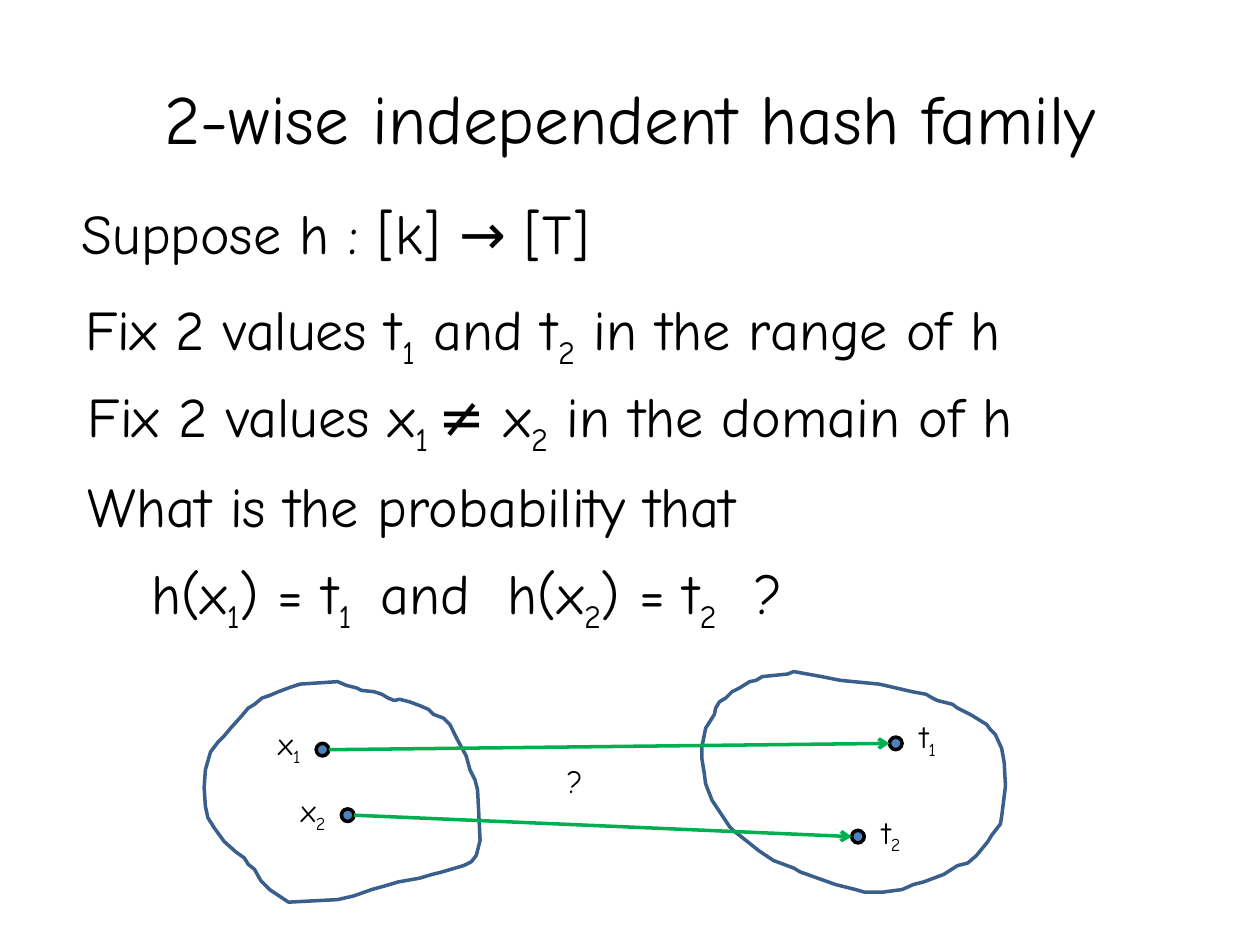
import pptx
import pptx.util
import pptx.dml.color
import pptx.enum.shapes
import pptx.enum.text
import pptx.oxml.ns
import lxml.etree

FONT = "Comic Neue"
BLACK, OUTLINE, DOT, ARROW = "000000", "3A5F8C", "4F81BD", "00B050"
DOT_SIZE = 0.1
LINE_HEIGHT, LABEL_HEIGHT = 0.64, 0.4

TITLE = "2-wise independent hash family"
# Text between bars is subscript: (text, left, top, width)
STATEMENTS = [
    ("Suppose h : [k] → [T]", 0.55, 1.53, 8.9),
    ("Fix 2 values t|1| and t|2| in the range of h", 0.58, 2.29, 8.9),
    ("Fix 2 values x|1 |≠ x|2| in the domain of h", 0.6, 2.98, 8.9),
    ("What is the probability that", 0.6, 3.69, 8.9),
    ("h(x|1|) = t|1 | and  h(x|2|) = t|2|  ?", 1.1, 4.38, 5.95),
]
# Outlines of the two sets, in hundredths of an inch
DOMAIN = [
    (313, 556), (308, 554), (303, 551), (297, 549), (287, 548), (283, 546), (275, 544),
    (268, 541), (238, 543), (229, 546), (221, 549), (214, 552), (208, 554), (202, 559),
    (197, 562), (192, 568), (183, 578), (178, 584), (173, 589), (167, 597), (163, 611),
    (162, 625), (163, 640), (165, 649), (170, 657), (178, 668), (187, 676), (194, 681),
    (197, 686), (202, 690), (207, 699), (214, 706), (229, 716), (268, 714), (281, 711),
    (295, 706), (306, 703), (316, 700), (333, 697), (343, 694), (351, 692), (368, 687),
    (374, 684), (378, 679), (381, 667), (380, 646), (379, 627), (377, 619), (373, 611),
    (370, 600), (363, 587), (357, 575), (352, 570), (344, 567), (340, 563), (333, 560),
    (325, 557), (317, 555),
]
RANGE = [
    (625, 535), (605, 537), (600, 540), (595, 541), (587, 546), (581, 549), (576, 554),
    (571, 557), (568, 562), (567, 567), (560, 578), (557, 593), (557, 602), (559, 614),
    (560, 622), (565, 635), (571, 644), (579, 656), (583, 660), (587, 663), (602, 675),
    (614, 683), (630, 689), (635, 692), (649, 697), (663, 702), (679, 706), (686, 708),
    (701, 708), (716, 706), (725, 702), (733, 700), (749, 694), (760, 687), (768, 685),
    (775, 679), (784, 668), (787, 663), (794, 654), (795, 648), (798, 624), (797, 605),
    (795, 594), (790, 583), (786, 579), (783, 575), (770, 567), (760, 562), (756, 559),
    (744, 556), (740, 554), (735, 551), (724, 549), (711, 546), (698, 543), (667, 540),
    (652, 537), (630, 533),
]
# Left and top of the dots at both ends of each mapping
MAPPINGS = [((2.51, 5.9), (7.06, 5.85)), ((2.71, 6.42), (6.76, 6.59))]
LABELS = [
    ("x|1|", 2.11, 5.7, 0.43),
    ("x|2|", 2.29, 6.23, 0.45),
    ("t|1|", 7.2, 5.64, 0.4),
    ("t|2|", 6.9, 6.4, 0.42),
    ("?", 4.4, 6, 0.38),
]


def inches(*lengths):
    return [pptx.util.Inches(length) for length in lengths]


def rgb(code):
    return pptx.dml.color.RGBColor.from_string(code)


def set_font(run, size):
    run.font.name = FONT
    run.font.size = pptx.util.Pt(size)
    run.font.color.rgb = rgb(BLACK)


def set_line(item, color):
    item.line.color.rgb = rgb(color)
    item.line.width = pptx.util.Pt(2)


def add_formula(slide, formula, left, top, width, height, size):
    frame = slide.shapes.add_textbox(*inches(left, top, width, height)).text_frame
    frame.word_wrap = True
    for index, piece in enumerate(formula.split("|")):
        if piece:
            run = frame.paragraphs[0].add_run()
            run.text = piece
            set_font(run, size)
            if index % 2:
                run.font._element.set("baseline", "-25000")


def add_set(slide, points):
    builder = slide.shapes.build_freeform(*points[0], scale=9144)
    builder.add_line_segments(points[1:], close=True)
    outline = builder.convert_to_shape()
    outline.shadow.inherit = False
    outline.fill.background()
    set_line(outline, OUTLINE)


def add_dot(slide, left, top):
    dot = slide.shapes.add_shape(
        pptx.enum.shapes.MSO_SHAPE.OVAL, *inches(left, top, DOT_SIZE, DOT_SIZE))
    dot.shadow.inherit = False
    dot.fill.solid()
    dot.fill.fore_color.rgb = rgb(DOT)
    set_line(dot, BLACK)


def add_arrow(slide, source, target):
    """Run from the right side of the source dot to the left side of the target dot."""
    middle = DOT_SIZE / 2
    arrow = slide.shapes.add_connector(
        pptx.enum.shapes.MSO_CONNECTOR.STRAIGHT,
        *inches(source[0] + DOT_SIZE, source[1] + middle, target[0], target[1] + middle))
    set_line(arrow, ARROW)
    qn = pptx.oxml.ns.qn
    lxml.etree.SubElement(arrow.line._get_or_add_ln(), qn("a:tailEnd"), type="arrow")
    lxml.etree.SubElement(arrow._element.spPr, qn("a:effectLst"))


def main():
    deck = pptx.Presentation()
    deck.slide_width, deck.slide_height = inches(10, 7.5)
    slide = deck.slides.add_slide(deck.slide_layouts[5])

    title = slide.shapes.title
    title.left, title.top, title.width, title.height = inches(0.5, 0.3, 9, 1.25)
    title.text_frame.text = TITLE
    title.text_frame.auto_size = pptx.enum.text.MSO_AUTO_SIZE.NONE
    title.text_frame.vertical_anchor = pptx.enum.text.MSO_ANCHOR.MIDDLE
    title.text_frame.paragraphs[0].alignment = pptx.enum.text.PP_ALIGN.CENTER
    set_font(title.text_frame.paragraphs[0].runs[0], 39.6)

    for statement in STATEMENTS:
        add_formula(slide, *statement, LINE_HEIGHT, 32)
    for points in (DOMAIN, RANGE):
        add_set(slide, points)
    for source, target in MAPPINGS:
        add_dot(slide, *source)
        add_dot(slide, *target)
        add_arrow(slide, source, target)
    for label in LABELS:
        add_formula(slide, *label, LABEL_HEIGHT, 18)

    deck.save("out.pptx")


if __name__ == "__main__":
    main()
